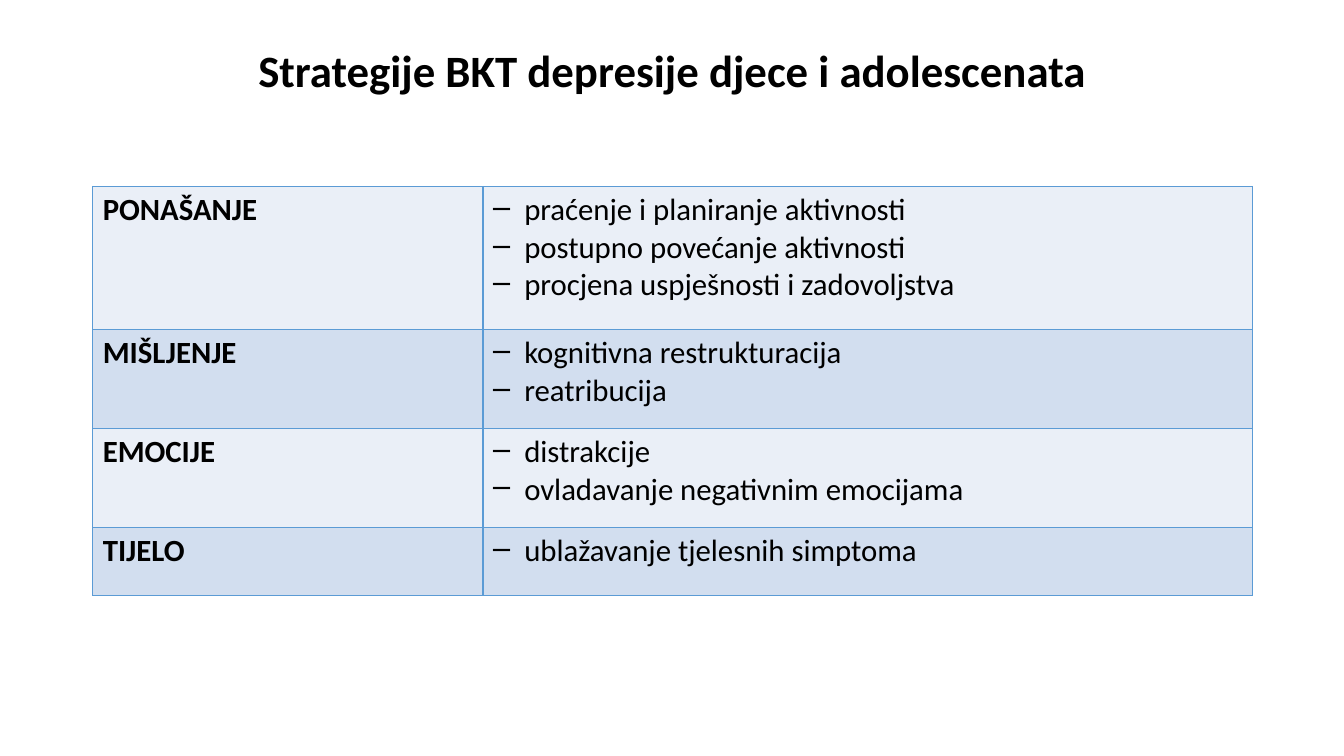
import pptx
import pptx.util
import pptx.dml.color
import pptx.enum.text
import pptx.oxml
import pptx.oxml.ns
import lxml.etree

Inches = pptx.util.Inches
RGBColor = pptx.dml.color.RGBColor
BLACK = RGBColor(0x00, 0x00, 0x00)
BLUE = RGBColor(0x5B, 0x9B, 0xD5)
BANDS = (RGBColor(0xEA, 0xEF, 0xF7), RGBColor(0xD2, 0xDE, 0xEF))

ROWS = (
    ("PONAŠANJE", 1.42, (
        "praćenje i planiranje aktivnosti",
        "postupno povećanje aktivnosti",
        "procjena uspješnosti i zadovoljstva")),
    ("MIŠLJENJE", 0.98, ("kognitivna restrukturacija", "reatribucija")),
    ("EMOCIJE", 0.98, ("distrakcije", "ovladavanje negativnim emocijama")),
    ("TIJELO", 0.68, ("ublažavanje tjelesnih simptoma",)),
)


def style(para, size, bold):
    font = para.font
    font.name = "Calibri"
    font.size = pptx.util.Pt(size)
    font.bold = bold
    font.color.rgb = BLACK


def add_dash(para):
    props = para._p.get_or_add_pPr()
    props.set("marL", str(Inches(0.31)))
    props.set("indent", str(-Inches(0.31)))
    mark = lxml.etree.Element(pptx.oxml.ns.qn("a:buChar"), char="–")
    props.insert(0, mark)


def add_edges(cell):
    props = cell._tc.get_or_add_tcPr()
    for side in ("lnL", "lnR", "lnT", "lnB"):
        props.append(pptx.oxml.parse_xml(
            f'<a:{side} {pptx.oxml.ns.nsdecls("a")} w="{pptx.util.Pt(1)}">'
            f'<a:solidFill><a:srgbClr val="{BLUE}"/></a:solidFill></a:{side}>'))


def fill_cell(cell, lines, band, bold):
    add_edges(cell)
    cell.fill.solid()
    cell.fill.fore_color.rgb = band
    cell.text = "\n".join(lines)
    for para in cell.text_frame.paragraphs:
        style(para, 22, bold)
        if not bold:
            add_dash(para)


def add_title(slide, left, top, width, height):
    title = slide.shapes.title
    title.left, title.top = Inches(left), Inches(top)
    title.width, title.height = Inches(width), Inches(height)
    frame = title.text_frame
    frame.text = "Strategije BKT depresije djece i adolescenata"
    frame.vertical_anchor = pptx.enum.text.MSO_ANCHOR.MIDDLE
    para = frame.paragraphs[0]
    para.alignment = pptx.enum.text.PP_ALIGN.CENTER
    para.line_spacing = 0.9
    style(para, 32, True)


def add_grid(slide, left, top, width):
    height = sum(row[1] for row in ROWS)
    table = slide.shapes.add_table(
        len(ROWS), 2, Inches(left), Inches(top),
        Inches(width), Inches(height)).table
    table.first_row = False
    table.horz_banding = False
    first = 3.87
    table.columns[0].width = Inches(first)
    table.columns[1].width = Inches(width - first)
    for i, (name, tall, items) in enumerate(ROWS):
        table.rows[i].height = Inches(tall)
        band = BANDS[i % 2]
        fill_cell(table.cell(i, 0), [name], band, True)
        fill_cell(table.cell(i, 1), items, band, False)


def main():
    deck = pptx.Presentation()
    deck.slide_width = Inches(13.33)
    deck.slide_height = Inches(7.5)
    slide = deck.slides.add_slide(deck.slide_layouts[5])
    add_title(slide, 0.92, 0.4, 11.5, 0.64)
    add_grid(slide, 0.92, 1.85, 11.5)
    deck.save("out.pptx")


if __name__ == "__main__":
    main()
